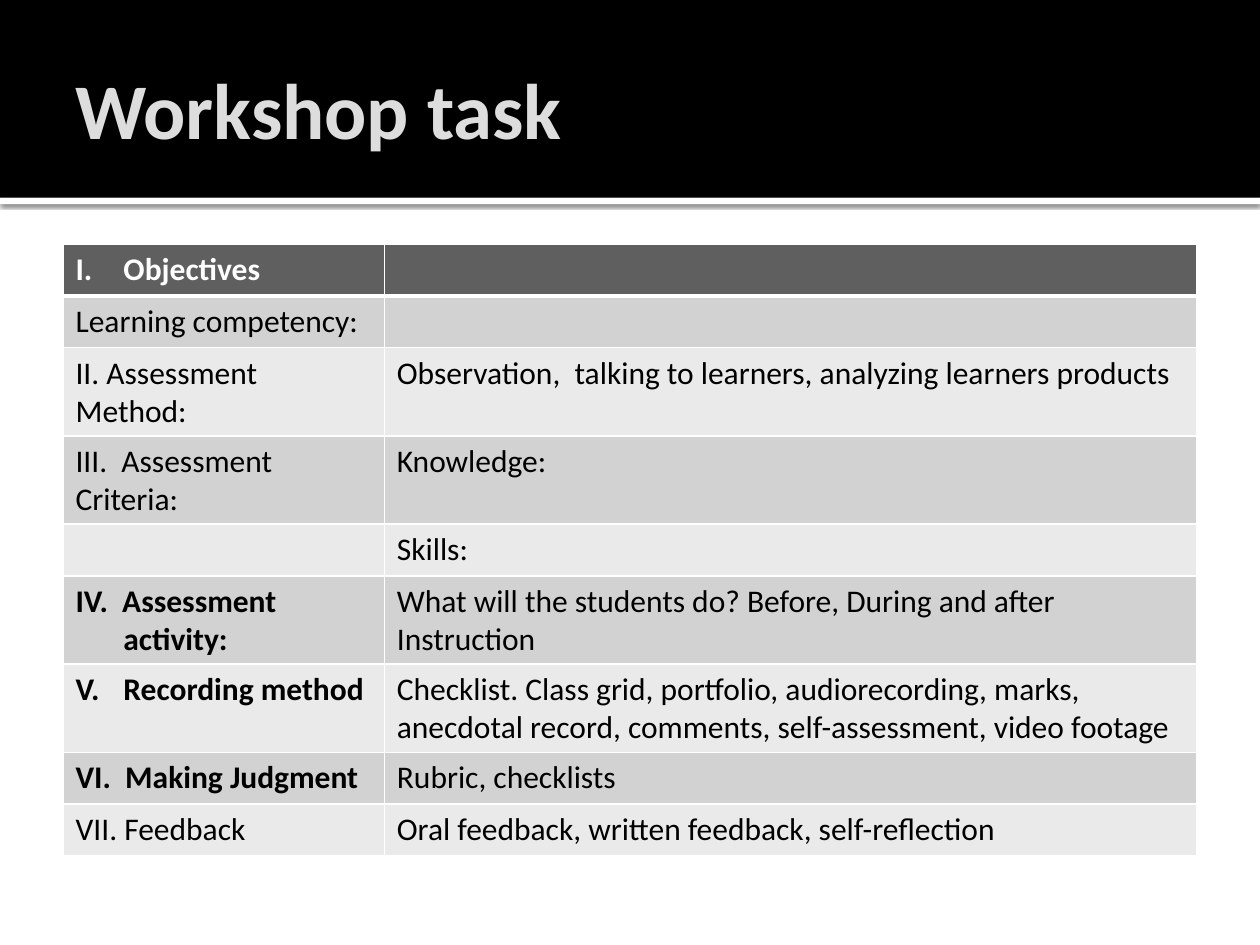
"""Build the workshop task slide: a dark title band above an assessment plan table."""
from lxml.etree import SubElement
from pptx import Presentation
from pptx.dml.color import RGBColor
from pptx.enum.shapes import MSO_SHAPE as Preset
from pptx.enum.text import MSO_ANCHOR as Anchor
from pptx.oxml.ns import qn
from pptx.util import Inches, Pt

FONT = "Calibri"
WIDTH, HEIGHT = 10, 7.5
MARGIN = WIDTH * 0.05
BAND_HEIGHT = 1.57
TABLE_TOP, ROW_HEIGHT = 1.94, 0.41
COLUMNS = (2.55, 6.45)
HEADER_FILL, BAND_FILLS = "5F5F5F", ("D2D2D2", "EAEAEA")
HANGING = 0.38

ROWS = [
    (dict(text="Objectives", bold=True, indent=HANGING, number=1), ""),
    (dict(text="Learning competency:"), ""),
    (dict(text="II. Assessment Method:"),
     "Observation,  talking to learners, analyzing learners products"),
    (dict(text="III.  Assessment Criteria:"), "Knowledge:"),
    (dict(text=""), "Skills:"),
    (dict(text="IV.  Assessment activity:", bold=True, indent=HANGING),
     "What will the students do? Before, During and after Instruction"),
    (dict(text="Recording method", bold=True, indent=HANGING, number=5),
     "Checklist. Class grid, portfolio, audiorecording, marks, anecdotal record, "
     "comments, self-assessment, video footage"),
    (dict(text="VI.  Making Judgment", bold=True), "Rubric, checklists"),
    (dict(text="VII. Feedback"), "Oral feedback, written feedback, self-reflection"),
]


def color(value):
    return RGBColor.from_string(value)


def write(frame, text, size=18, ink="000000", bold=False, indent=0, number=None):
    paragraph = frame.paragraphs[0]
    paragraph.font.size = Pt(size)
    if indent:
        properties = paragraph._p.get_or_add_pPr()
        properties.set("marL", str(Inches(indent)))
        properties.set("indent", str(-Inches(indent)))
        if number:
            SubElement(properties, qn("a:buFont"), typeface="+mj-lt")
            SubElement(properties, qn("a:buAutoNum"), type="romanUcPeriod", startAt=str(number))
    if text:
        run = paragraph.add_run()
        run.text = text
        font = run.font
        font.name, font.size, font.bold = FONT, Pt(size), bold
        font.color.rgb = color(ink)


def add_band(slide, top, height, fill):
    shape = slide.shapes.add_shape(Preset.RECTANGLE, 0, Inches(top), Inches(WIDTH), Inches(height))
    shape.shadow.inherit = False
    shape.fill.solid()
    shape.fill.fore_color.rgb = color(fill)
    shape.line.fill.background()
    return shape


def add_shadow(shape):
    effects = shape._element.spPr.find(qn("a:effectLst"))
    shadow = SubElement(effects, qn("a:outerShdw"), blurRad=str(Pt(2.5)), dist=str(Pt(0.8)),
                        dir="5400000", algn="tl", rotWithShape="0")
    ink = SubElement(shadow, qn("a:srgbClr"), val="000000")
    SubElement(ink, qn("a:alpha"), val="60000")


def add_title(slide, text):
    box = slide.shapes.add_textbox(Inches(MARGIN), Inches(0.17),
                                   Inches(WIDTH - 2 * MARGIN), Inches(1.37))
    frame = box.text_frame
    frame.word_wrap = True
    frame.vertical_anchor = Anchor.MIDDLE
    frame.margin_left = Inches(0.1)
    frame.margin_right = frame.margin_top = frame.margin_bottom = Inches(0.05)
    write(frame, text, size=45, ink="DDDDDD", bold=True)


def style_cell(cell, fill, top=1, bottom=1):
    properties = cell._tc.get_or_add_tcPr()
    for side, width in dict(L=1, R=1, T=top, B=bottom).items():
        line = SubElement(properties, qn(f"a:ln{side}"), w=str(Pt(width)))
        SubElement(SubElement(line, qn("a:solidFill")), qn("a:srgbClr"), val="FFFFFF")
    cell.fill.solid()
    cell.fill.fore_color.rgb = color(fill)


def add_plan(slide):
    frame = slide.shapes.add_table(len(ROWS), len(COLUMNS), Inches(MARGIN), Inches(TABLE_TOP),
                                   Inches(sum(COLUMNS)), Inches(ROW_HEIGHT * len(ROWS)))
    table = frame.table
    for column, width in zip(table.columns, COLUMNS):
        column.width = Inches(width)
    for index, (label, detail) in enumerate(ROWS):
        table.rows[index].height = Inches(ROW_HEIGHT)
        header = index == 0
        fill = HEADER_FILL if header else BAND_FILLS[(index - 1) % 2]
        ink = "FFFFFF" if header else "000000"
        for cell, content in zip(table.rows[index].cells, (label, dict(text=detail))):
            style_cell(cell, fill, top=3 if index == 1 else 1, bottom=3 if header else 1)
            write(cell.text_frame, ink=ink, **content)


def main():
    presentation = Presentation()
    presentation.slide_width, presentation.slide_height = Inches(WIDTH), Inches(HEIGHT)
    slide = presentation.slides.add_slide(presentation.slide_layouts[6])
    add_shadow(add_band(slide, BAND_HEIGHT, 0.05, "FFFFFF"))
    add_band(slide, 0, BAND_HEIGHT, "000000")
    add_title(slide, "Workshop task")
    add_plan(slide)
    presentation.save("out.pptx")


if __name__ == "__main__":
    main()
